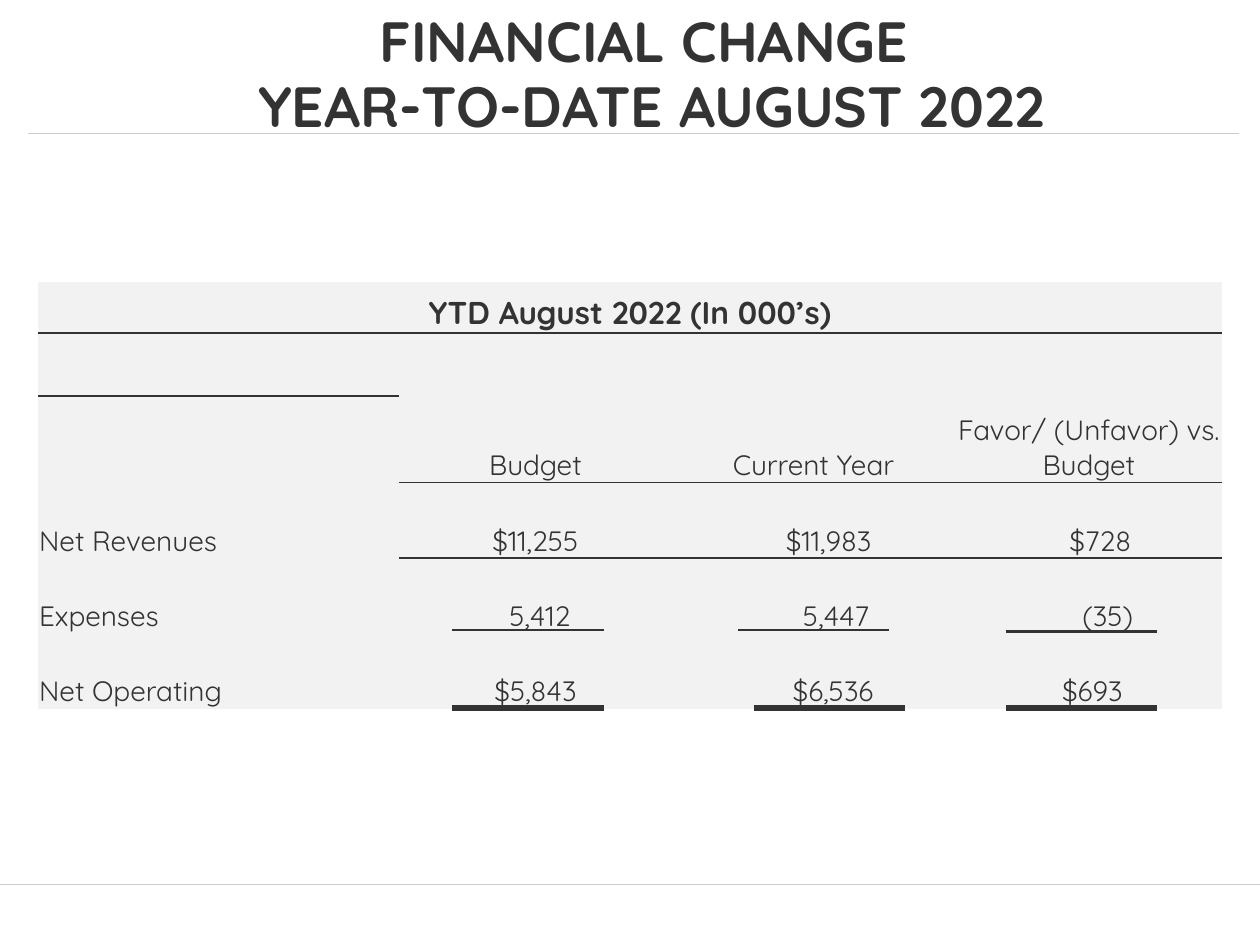
from lxml import etree
from pptx import Presentation
from pptx import util as u
from pptx.dml.color import RGBColor
from pptx.enum import shapes, text
from pptx.oxml.ns import qn

INK = RGBColor(0x33, 0x33, 0x33)
RULE = RGBColor(0xCC, 0xCC, 0xCC)
PANEL = RGBColor(0xF2, 0xF2, 0xF2)
FONT = "Quicksand"
NO_STYLE = "{2D5ABB26-0587-4C30-8999-92F81FD0307C}"

# (line, left indent in cm)
TITLE = [("FINANCIAL CHANGE", 0), ("YEAR-TO-DATE AUGUST 2022", 0.32)]
CAPTION = "YTD August 2022 (In 000’s)"
HEADINGS = ["Budget", "Current Year", "Favor/ (Unfavor) vs. Budget"]
# label, then (figure, left indent in cm) for each column
FIGURES = [
    ("Net Revenues", ("$11,255", 0), ("$11,983", 0.61), ("$728", 0.46)),
    ("Expenses", ("5,412", 0.18), ("5,447", 0.91), ("(35)", 0.76)),
    ("Net Operating", ("$5,843", 0), ("$6,536", 0.79), ("$693", 0.14)),
]
COL_WIDTHS = [7.29, 5.49, 5.72, 5.38]
ROW_HEIGHTS = [1.02, 1.27, 0.86, 0.89, 1.52, 1.52, 1.52]
TABLE_LEFT, TABLE_TOP = 0.76, 5.69
HEAD_ROW, HEAD_END, BODY_ROW = 1, 3, 4

# left, top, width in cm; weight in points; colour
SUM_WIDTH = 3.05
LINES = [
    (0, 17.83, 25.4, 1, RULE),
    (0.56, 2.69, 24.41, 0.5, RULE),
    (9.12, 12.7, SUM_WIDTH, 1.25, INK),
    (14.88, 12.7, SUM_WIDTH, 1.25, INK),
    (20.27, 12.73, SUM_WIDTH, 1.25, INK),
    (9.12, 14.27, SUM_WIDTH, 3, INK),
    (15.19, 14.27, SUM_WIDTH, 3, INK),
    (20.27, 14.27, SUM_WIDTH, 3, INK),
]


def add_run(p, words, size, bold=False):
    r = p.add_run()
    r.text = words
    r.font.name, r.font.size, r.font.bold = FONT, u.Pt(size), bold
    r.font.color.rgb = INK


def add_line(slide, left, top, width, weight, color):
    line = slide.shapes.add_connector(
        shapes.MSO_CONNECTOR.STRAIGHT,
        u.Cm(left), u.Cm(top), u.Cm(left + width), u.Cm(top))
    line.line.width = u.Pt(weight)
    line.line.color.rgb = color
    etree.SubElement(line.element.spPr, qn("a:effectLst"))


def add_title(slide):
    sp = slide.shapes.add_textbox(u.Cm(2.79), u.Cm(1.47), u.Cm(20.37), u.Cm(1.45))
    tf = sp.text_frame
    tf.word_wrap = True
    tf.vertical_anchor = text.MSO_ANCHOR.BOTTOM
    tf.margin_top = tf.margin_bottom = u.Cm(0.08)
    for i, (words, indent) in enumerate(TITLE):
        p = tf.add_paragraph() if i else tf.paragraphs[0]
        p.alignment = text.PP_ALIGN.CENTER
        p.line_spacing = 0.96
        p._p.get_or_add_pPr().set("marL", str(u.Cm(indent)))
        add_run(p, words, 32.4, True)


def add_border(cell, side):
    ln = etree.SubElement(cell._tc.get_or_add_tcPr(), qn("a:ln" + side), w=str(u.Pt(1)))
    fill = etree.SubElement(ln, qn("a:solidFill"))
    etree.SubElement(fill, qn("a:srgbClr"), val=str(INK))


def style_cell(cell, row, col):
    """Set margins, then the rules under the caption and headings, then the fill."""
    cell.margin_left = cell.margin_right = cell.margin_top = u.Cm(0.03)
    cell.margin_bottom = 0
    cell.vertical_anchor = text.MSO_ANCHOR.BOTTOM
    if row == HEAD_ROW or (row == BODY_ROW and col):
        add_border(cell, "T")
    if row == 0 or (HEAD_ROW <= row <= HEAD_END and col):
        add_border(cell, "B")
    cell.fill.solid()
    cell.fill.fore_color.rgb = PANEL


def write_cell(cell, words, size=16, bold=False, indent=0, align=text.PP_ALIGN.CENTER):
    cell.margin_left = u.Cm(0.03 + indent)
    p = cell.text_frame.paragraphs[0]
    p.alignment = align
    add_run(p, words, size, bold)


def add_figures(slide):
    frame = slide.shapes.add_table(
        len(ROW_HEIGHTS), len(COL_WIDTHS), u.Cm(TABLE_LEFT), u.Cm(TABLE_TOP),
        u.Cm(sum(COL_WIDTHS)), u.Cm(sum(ROW_HEIGHTS)))
    table = frame.table
    table.first_row = table.horz_banding = False
    table._tbl.tblPr.find(qn("a:tableStyleId")).text = NO_STYLE
    for column, width in zip(table.columns, COL_WIDTHS):
        column.width = u.Cm(width)
    for r, height in enumerate(ROW_HEIGHTS):
        table.rows[r].height = u.Cm(height)
        for c in range(len(COL_WIDTHS)):
            style_cell(table.cell(r, c), r, c)

    table.cell(0, 0).merge(table.cell(0, len(COL_WIDTHS) - 1))
    write_cell(table.cell(0, 0), CAPTION, 18, True)
    for c, heading in enumerate(HEADINGS, 1):
        table.cell(HEAD_ROW, c).merge(table.cell(HEAD_END, c))
        write_cell(table.cell(HEAD_ROW, c), heading)
    for r, (label, *figures) in enumerate(FIGURES, BODY_ROW):
        write_cell(table.cell(r, 0), label, align=text.PP_ALIGN.LEFT)
        for c, (figure, indent) in enumerate(figures, 1):
            write_cell(table.cell(r, c), figure, indent=indent)


def main():
    prs = Presentation()
    prs.slide_width, prs.slide_height = u.Cm(25.4), u.Cm(19.05)
    slide = prs.slides.add_slide(prs.slide_layouts[6])
    add_title(slide)
    add_figures(slide)
    for line in LINES:
        add_line(slide, *line)
    prs.save("out.pptx")


if __name__ == "__main__":
    main()
